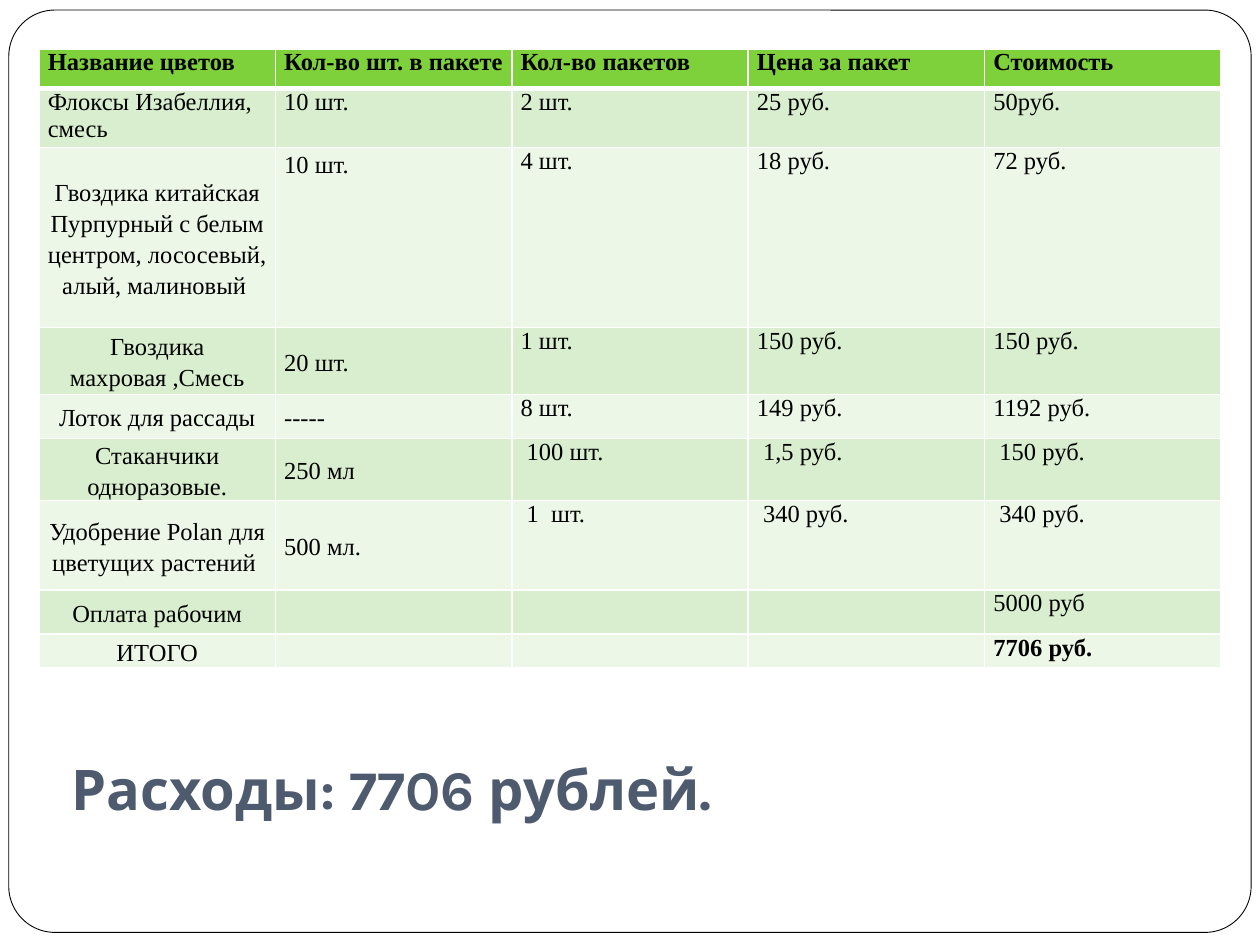
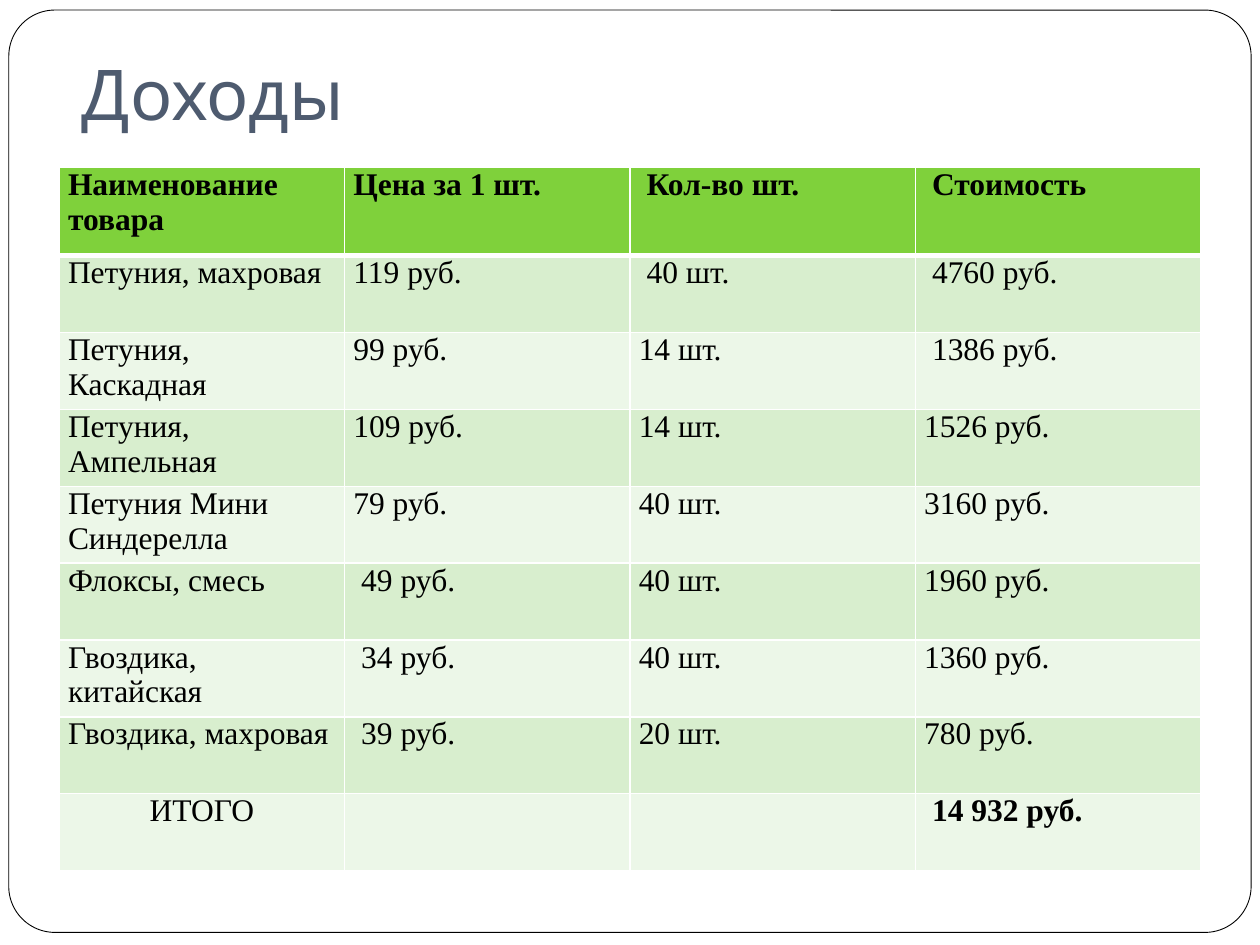
from lxml import etree
from pptx import Presentation
from pptx.dml.color import RGBColor
from pptx.enum import shapes, text
from pptx.oxml import ns
from pptx.util import Inches, Pt

SLATE, BLACK, WHITE = "4E5B6F", "000000", "FFFFFF"
HEADER, BANDS = "7FD13B", ("D8EECE", "ECF7E8")
TITLE_FONT, TABLE_FONT = "Karla", "Times New Roman"
PLAIN_TABLE = "{2D5ABB26-0587-4C30-8999-92F81FD0307C}"
TITLE_ONLY, BLANK = 5, 6


def color(hex_code):
    return RGBColor.from_string(hex_code)


class Deck:
    """Holds the shared style and the current slide."""

    def __init__(self):
        self.prs = Presentation()
        self.prs.slide_width, self.prs.slide_height = Inches(10), Inches(7.5)
        self.slide = None

    def new_slide(self, layout):
        self.slide = self.prs.slides.add_slide(self.prs.slide_layouts[layout])
        self.frame()

    def frame(self):
        """Rounded page outline, behind everything else."""
        outline = self.slide.shapes.add_shape(
            shapes.MSO_SHAPE.ROUNDED_RECTANGLE,
            Inches(0.07), Inches(0.08), Inches(9.86), Inches(7.32))
        outline.adjustments[0] = 0.05
        outline.shadow.inherit = False
        outline.fill.solid()
        outline.fill.fore_color.rgb = color(WHITE)
        outline.line.color.rgb = color(BLACK)
        outline.line.width = Pt(0.5)
        tree = outline._element.getparent()
        tree.insert(2, outline._element)

    def set_words(self, paragraph, words, size, font, hex_code, bold=False):
        paragraph.text = words
        paragraph.font.size = Pt(size)
        paragraph.font.name = font
        paragraph.font.bold = bold
        paragraph.font.color.rgb = color(hex_code)

    def title(self, words, left, top, width, height):
        heading = self.slide.shapes.title
        heading.left, heading.top = Inches(left), Inches(top)
        heading.width, heading.height = Inches(width), Inches(height)
        body = heading.text_frame
        body.auto_size = text.MSO_AUTO_SIZE.NONE
        body.vertical_anchor = text.MSO_ANCHOR.BOTTOM
        body.margin_bottom = Inches(0.1)
        self.set_words(body.paragraphs[0], words, 40, TITLE_FONT, SLATE)
        body.paragraphs[0].alignment = text.PP_ALIGN.LEFT

    def summary(self, words, left, top, width, height):
        box = self.slide.shapes.add_textbox(
            Inches(left), Inches(top), Inches(width), Inches(height))
        box.text_frame.word_wrap = True
        box.text_frame.auto_size = text.MSO_AUTO_SIZE.SHAPE_TO_FIT_TEXT
        self.set_words(box.text_frame.paragraphs[0], words, 32, TITLE_FONT, SLATE, True)

    def borders(self, cell, top, bottom):
        """White cell edges; they must stand before the fill."""
        props = cell._tc.get_or_add_tcPr()
        edges = {"lnL": 1, "lnR": 1, "lnT": top, "lnB": bottom}
        for place, (tag, points) in enumerate(edges.items()):
            edge = etree.Element(ns.qn(f"a:{tag}"), w=str(Pt(points)))
            fill = etree.SubElement(edge, ns.qn("a:solidFill"))
            etree.SubElement(fill, ns.qn("a:srgbClr"), val=WHITE)
            props.insert(place, edge)

    def table(self, rows, heights, left, top, width, size):
        """Green header, banded rows and a bold sum in the last cell."""
        last_row, last_column = len(rows) - 1, len(rows[0]) - 1
        graphic = self.slide.shapes.add_table(
            len(rows), len(rows[0]), Inches(left), Inches(top),
            Inches(width), Inches(sum(heights)))
        table = graphic.table
        table._tbl.tblPr.find(ns.qn("a:tableStyleId")).text = PLAIN_TABLE
        for r, (row, height) in enumerate(zip(rows, heights)):
            table.rows[r].height = Inches(height)
            for c, words in enumerate(row):
                cell = table.cell(r, c)
                cell.margin_left = cell.margin_right = Inches(0.07)
                cell.margin_top = cell.margin_bottom = 0
                cell.fill.solid()
                cell.fill.fore_color.rgb = color(BANDS[(r - 1) % 2] if r else HEADER)
                self.borders(cell, 3 if r == 1 else 1, 3 if r == 0 else 1)
                bold = r == 0 or (r, c) == (last_row, last_column)
                paragraph = cell.text_frame.paragraphs[0]
                self.set_words(paragraph, words, size, TABLE_FONT, BLACK, bold)
                if not words:
                    paragraph._p.get_or_add_endParaRPr().set("sz", str(size * 100))
        return table

    def center(self, cell):
        cell.text_frame.paragraphs[0].alignment = text.PP_ALIGN.CENTER

    def loosen(self, cell, middle=True):
        paragraph = cell.text_frame.paragraphs[0]
        paragraph.line_spacing = 1.15
        paragraph.space_after = Pt(10)
        if middle:
            cell.vertical_anchor = text.MSO_ANCHOR.MIDDLE


EXPENSES = [
    ("Название цветов", "Кол-во шт. в пакете", "Кол-во пакетов", "Цена за пакет", "Стоимость"),
    ("Флоксы Изабеллия, смесь", "10 шт.", "2 шт.", "25 руб.", "50руб."),
    ("Гвоздика китайская Пурпурный с белым центром, лососевый, алый, малиновый ",
     "10 шт.", "4 шт.", "18 руб.", "72 руб."),
    ("Гвоздика махровая ,Смесь", "20 шт.", "1 шт.", "150 руб.", "150 руб."),
    ("Лоток для рассады", "-----", "8 шт.", "149 руб.", "1192 руб."),
    ("Стаканчики одноразовые.", "250 мл", " 100 шт.", " 1,5 руб.", " 150 руб."),
    ("Удобрение Polan для цветущих растений ", "500 мл.", " 1  шт.", " 340 руб.", " 340 руб."),
    ("Оплата рабочим", "", "", "", "5000 руб"),
    ("ИТОГО", "", "", "", "7706 руб."),
]
EXPENSE_HEIGHTS = [0.31, 0.47, 1.43, 0.53, 0.35, 0.35, 0.71, 0.35, 0.27]

INCOME = [
    ("Наименование товара", "Цена за 1 шт.", " Кол-во шт.", " Стоимость"),
    ("Петуния, махровая", "119 руб.", " 40 шт.", " 4760 руб."),
    ("Петуния, Каскадная", "99 руб.", "14 шт.", " 1386 руб."),
    ("Петуния, Ампельная", "109 руб.", "14 шт.", "1526 руб."),
    ("Петуния Мини Синдерелла", "79 руб.", "40 шт.", "3160 руб."),
    ("Флоксы, смесь", " 49 руб.", "40 шт.", "1960 руб."),
    ("Гвоздика, китайская", " 34 руб.", "40 шт.", "1360 руб."),
    ("Гвоздика, махровая", " 39 руб.", "20 шт.", "780 руб."),
    ("ИТОГО", "", "", " 14 932 руб."),
]
INCOME_HEIGHTS = [0.7] + [0.61] * 8


def main():
    deck = Deck()

    # Expenses
    deck.new_slide(BLANK)
    expenses = deck.table(EXPENSES, EXPENSE_HEIGHTS, 0.31, 0.39, 9.38, 14)
    for r in range(2, len(EXPENSES)):
        deck.center(expenses.cell(r, 0))
        deck.loosen(expenses.cell(r, 0))
        if EXPENSES[r][1]:
            deck.loosen(expenses.cell(r, 1), middle=r > 2)
    deck.summary("Расходы: 7706 рублей.", 0.47, 5.94, 7.03, 0.64)

    # Income
    deck.new_slide(TITLE_ONLY)
    deck.title("Доходы", 0.55, 0.3, 8.95, 0.87)
    income = deck.table(INCOME, INCOME_HEIGHTS, 0.47, 1.33, 9.06, 18)
    deck.center(income.cell(len(INCOME) - 1, 0))

    deck.prs.save("out.pptx")


if __name__ == "__main__":
    main()
